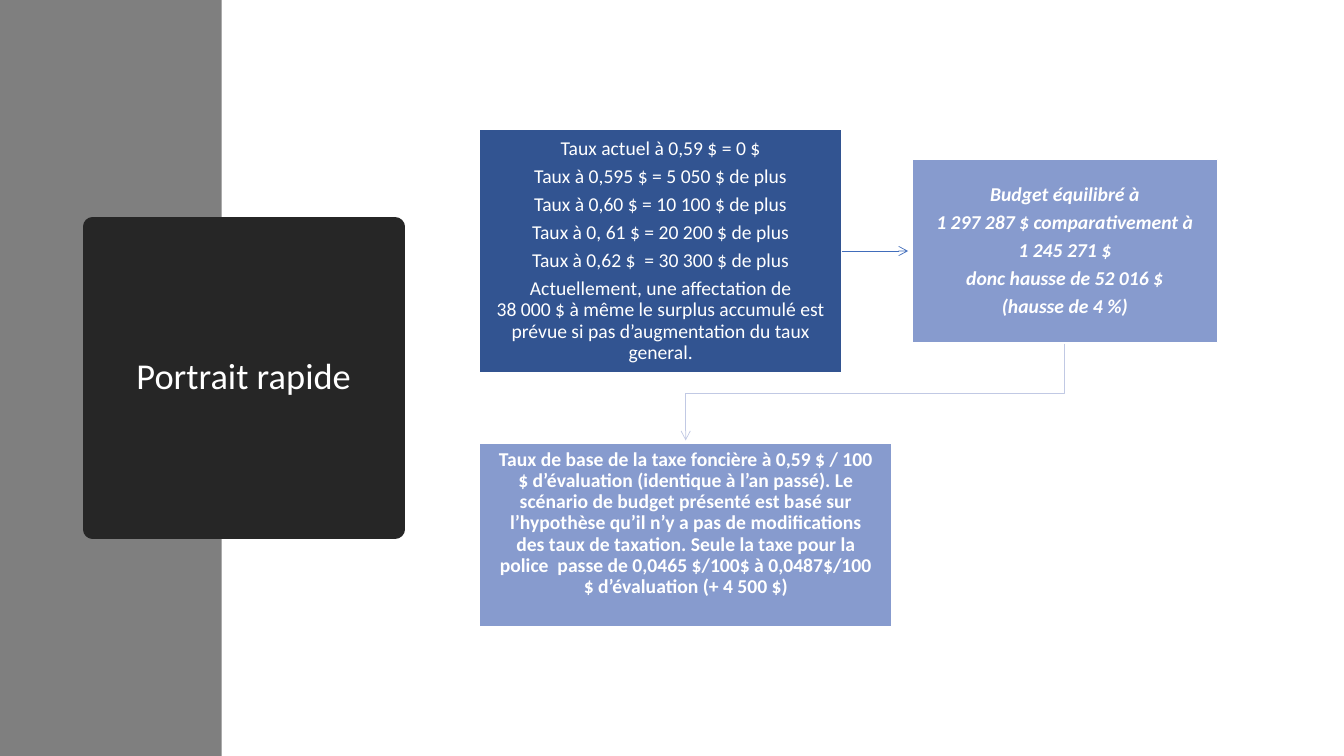
from lxml.etree import SubElement as Sub
from pptx import Presentation
from pptx.dml.color import RGBColor
from pptx.enum.shapes import MSO_CONNECTOR as Link, MSO_SHAPE as Form
from pptx.enum.text import MSO_ANCHOR as Anchor, MSO_AUTO_SIZE as Fit, PP_ALIGN as Align
from pptx.oxml.ns import qn
from pptx.util import Pt

WHITE = RGBColor(0xFF, 0xFF, 0xFF)
GREY = RGBColor(0x7F, 0x7F, 0x7F)
BLACK = RGBColor(0x26, 0x26, 0x26)
NAVY = RGBColor(0x32, 0x54, 0x91)
SKY = RGBColor(0x87, 0x9B, 0xCE)
BLUE = RGBColor(0x41, 0x6D, 0xBB)
PALE = RGBColor(0xC1, 0xC9, 0xE4)

RATES = """Taux actuel à 0,59 $ = 0 $
Taux à 0,595 $ = 5 050 $ de plus
Taux à 0,60 $ = 10 100 $ de plus
Taux à 0, 61 $ = 20 200 $ de plus
Taux à 0,62 $  = 30 300 $ de plus
Actuellement, une affectation de\v38 000 $ à même le surplus accumulé est prévue si pas d’augmentation du taux general."""
BUDGET = """Budget équilibré à
1 297 287 $ comparativement à
1 245 271 $
donc hausse de 52 016 $
(hausse de 4 %)"""
BASE = (
    "Taux de base de la taxe foncière à 0,59 $ / 100 $ d’évaluation "
    "(identique à l’an passé). Le scénario de budget présenté est basé sur "
    "l’hypothèse qu’il n’y a pas de modifications des taux de taxation. "
    "Seule la taxe pour la police  passe de 0,0465 $/100$ à 0,0487$/100 $ "
    "d’évaluation (+ 4 500 $)"
)


class Deck:
    font = "Calibri"
    size = 14
    gap = 4.9
    side = 11
    edge = 3.5

    def __init__(self, slide):
        self.slide = slide
        self.shapes = slide.shapes

    def paint(self, shape, fill, line=None, width=1):
        shape.fill.solid()
        shape.fill.fore_color.rgb = fill
        if line is None:
            shape.line.fill.background()
        else:
            shape.line.color.rgb = line
            shape.line.width = Pt(width)

    def letter(self, frame, text, size, after=0, bold=False, italic=False):
        frame.text = text
        frame.word_wrap = True
        frame.auto_size = Fit.NONE
        frame.vertical_anchor = Anchor.MIDDLE
        for para in frame.paragraphs:
            para.alignment = Align.CENTER
            para.line_spacing = 0.9
            para.space_after = Pt(after)
            for run in para.runs:
                font = run.font
                font.name, font.size = self.font, Pt(size)
                font.bold, font.italic = bold, italic
                font.color.rgb = WHITE

    def title(self, text, left, top, width, height):
        head = self.shapes.title
        head.left, head.top = Pt(left), Pt(top)
        head.width, head.height = Pt(width), Pt(height)
        self.paint(head, BLACK, BLACK, 13.75)
        self.letter(head.text_frame, text, 26)
        self.shapes._spTree.append(head._element)

    def rect(self, left, top, width, height, fill, line=None):
        shape = self.shapes.add_shape(
            Form.RECTANGLE, Pt(left), Pt(top), Pt(width), Pt(height))
        shape.shadow.inherit = False
        self.paint(shape, fill, line)
        return shape

    def box(self, text, left, top, width, height, fill, foot=edge, **style):
        shape = self.rect(left, top, width, height, fill, WHITE)
        frame = shape.text_frame
        frame.margin_left = frame.margin_right = Pt(self.side)
        frame.margin_top, frame.margin_bottom = Pt(self.edge), Pt(foot)
        self.letter(frame, text, self.size, self.gap, **style)
        return shape

    def indent(self, shape, row, amount):
        para = shape.text_frame.paragraphs[row]
        para._p.get_or_add_pPr().set("indent", str(Pt(amount)))

    def tip(self, shape, color):
        shape.line.color.rgb = color
        shape.line.width = Pt(0.5)
        Sub(shape.line._get_or_add_ln(), qn("a:tailEnd"), type="arrow")

    def arrow(self, start, right, color):
        mid = start.top + start.height // 2
        line = self.shapes.add_connector(
            Link.STRAIGHT, start.left + start.width, mid, Pt(right), mid)
        line.begin_connect(start, 3)
        self.tip(line, color)
        Sub(line._element.spPr, qn("a:effectLst"))

    def bend(self, points, color):
        first, *rest = [(Pt(x), Pt(y)) for x, y in points]
        form = self.shapes.build_freeform(*first)
        form.add_line_segments(rest, close=False)
        shape = form.convert_to_shape()
        shape.shadow.inherit = False
        shape.fill.background()
        self.tip(shape, color)


def main():
    show = Presentation()
    show.slide_width, show.slide_height = Pt(960), Pt(540)
    deck = Deck(show.slides.add_slide(show.slide_layouts[5]))
    deck.rect(0, 0, 158.4, 540, GREY)
    deck.title("Portrait rapide", 66.2, 162, 216, 216)

    rates = deck.box(RATES, 342.7, 92.2, 258.5, 174.2, NAVY)
    deck.indent(rates, 5, -38)
    budget = deck.box(BUDGET, 651.6, 113.8, 218.2, 131, SKY,
                      bold=True, italic=True)
    deck.indent(budget, 0, -26)
    deck.box(BASE, 342.7, 316.8, 294.5, 131, SKY, foot=20, bold=True)

    deck.arrow(rates, 648.7, BLUE)
    deck.bend([(760.5, 245.5), (760.5, 280.8), (489.8, 280.8), (489.8, 314.6)], PALE)
    show.save("out.pptx")


if __name__ == "__main__":
    main()
